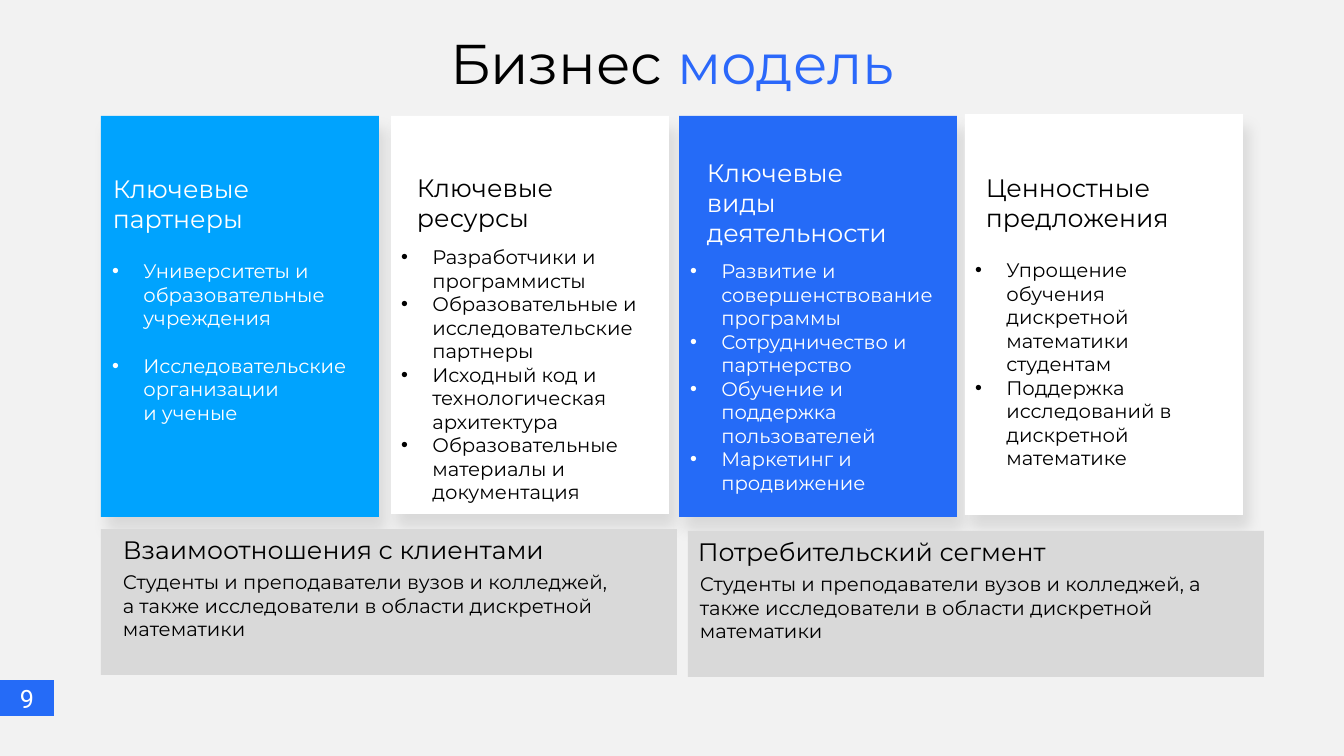
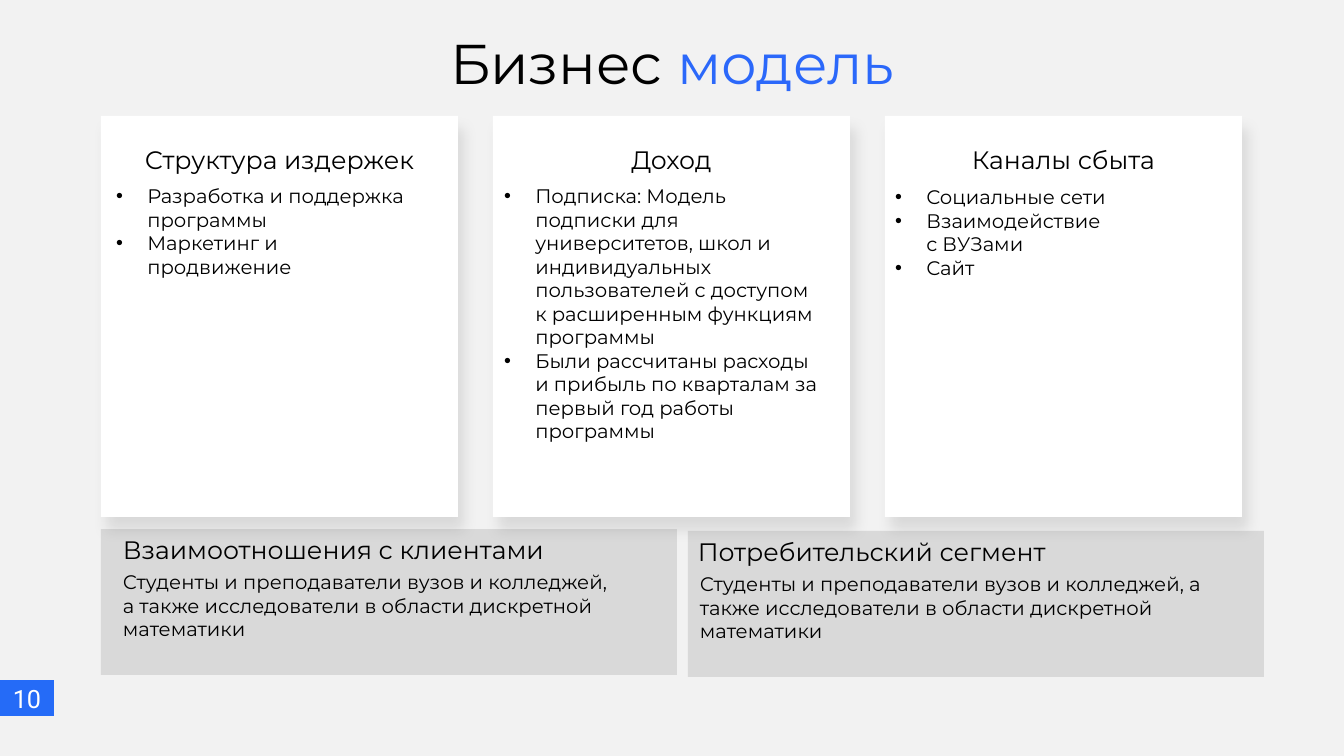
from dataclasses import dataclass

from lxml import etree
from pptx import Presentation
from pptx import util as u
from pptx.dml.color import RGBColor
from pptx.enum import shapes, text
from pptx.oxml.ns import qn

PX = 12192000 / 1344
BLACK = RGBColor(0x00, 0x00, 0x00)
WHITE = RGBColor(0xFF, 0xFF, 0xFF)
BACKGROUND = RGBColor(0xF2, 0xF2, 0xF2)
PANEL = RGBColor(0xD9, 0xD9, 0xD9)
SKY = RGBColor(0x00, 0xA3, 0xFE)
BLUE = RGBColor(0x25, 0x6B, 0xF7)
ACCENT = RGBColor(0x2B, 0x68, 0xFA)
COMPARISON = 4  # layout with a title and four body placeholders
HEADING, BODY = 18, 14
LEFT, CENTER = text.PP_ALIGN.LEFT, text.PP_ALIGN.CENTER


@dataclass
class Card:
    """A column of the model; boxes are in px, a list box reaches the card's foot."""
    heading: str
    items: list
    box: tuple
    heading_box: tuple
    list_box: tuple
    fill: RGBColor = WHITE
    color: RGBColor = BLACK
    align: int = LEFT
    gap: int = 0


def px(*lengths):
    return [u.Emu(round(length * PX)) for length in lengths]


class Deck:
    font = "Montserrat"

    def __init__(self):
        self.prs = Presentation()
        self.prs.slide_width, self.prs.slide_height = px(1344, 756)
        fill = self.prs.slide_master.background.fill
        fill.solid()
        fill.fore_color.rgb = BACKGROUND

    def start(self, number):
        layout = self.prs.slide_layouts[COMPARISON]
        self.slide = self.prs.slides.add_slide(layout)
        self.free_bodies = list(self.slide.placeholders)[1:]
        self.title(("Бизнес ", BLACK), ("модель", ACCENT))
        self.page_number(number)

    def finish(self):
        for body in self.free_bodies:
            body.element.getparent().remove(body.element)

    def run(self, paragraph, words, size, color, font=None):
        run = paragraph.add_run()
        run.text = words
        run.font.name = font or self.font
        run.font.size = u.Pt(size)
        run.font.bold = False
        run.font.color.rgb = color

    def place(self, placeholder, box):
        """Moves a placeholder to the front of the slide and prepares its frame."""
        self.slide.shapes._spTree.append(placeholder.element)
        (placeholder.left, placeholder.top,
         placeholder.width, placeholder.height) = px(*box)
        frame = placeholder.text_frame
        frame.word_wrap = True
        frame.auto_size = text.MSO_AUTO_SIZE.NONE
        frame.vertical_anchor = text.MSO_ANCHOR.TOP
        return frame

    def title(self, *parts):
        paragraph = self.place(self.slide.shapes.title, (423, 23, 498, 78)).paragraphs[0]
        paragraph.alignment = CENTER
        for words, color in parts:
            self.run(paragraph, words, 40, color)

    def rectangle(self, box, fill, shadow=False):
        shape = self.slide.shapes.add_shape(shapes.MSO_SHAPE.RECTANGLE, *px(*box))
        shape.fill.solid()
        shape.fill.fore_color.rgb = fill
        shape.line.fill.background()
        shape.shadow.inherit = False
        if shadow:
            effects = shape.element.spPr.find(qn("a:effectLst"))
            outer = etree.SubElement(
                effects, qn("a:outerShdw"), blurRad=str(u.Pt(10)),
                dist=str(u.Pt(10)), dir=str(67 * 60000), algn="tl", rotWithShape="0")
            tint = etree.SubElement(outer, qn("a:srgbClr"), val=str(BLACK))
            etree.SubElement(tint, qn("a:alpha"), val="10000")
        return shape

    def page_number(self, number):
        frame = self.rectangle((0, 680, 54, 36), BLUE).text_frame
        frame.vertical_anchor = text.MSO_ANCHOR.MIDDLE
        frame.margin_left = frame.margin_right = 0
        paragraph = frame.paragraphs[0]
        paragraph.alignment = CENTER
        self.run(paragraph, str(number), HEADING, WHITE, "Roboto")

    def label(self, words, box, size, color=BLACK, align=LEFT):
        frame = self.slide.shapes.add_textbox(*px(*box)).text_frame
        frame.word_wrap = True
        paragraph = frame.paragraphs[0]
        paragraph.alignment = align
        self.run(paragraph, words, size, color)

    def bullets(self, items, box, color, gap):
        """Fills the next body placeholder; a newline in an item is a line break."""
        frame = self.place(self.free_bodies.pop(0), box)
        for index, item in enumerate(items):
            paragraph = frame.add_paragraph() if index else frame.paragraphs[0]
            paragraph.alignment = LEFT
            paragraph.line_spacing = 1.0
            paragraph.space_before = u.Pt(gap if index else 0)
            props = paragraph._p.get_or_add_pPr()
            indent = u.Inches(0.31)
            props.set("marL", str(indent))
            props.set("indent", str(-indent))
            etree.SubElement(props, qn("a:buFont"), typeface="Arial")
            etree.SubElement(props, qn("a:buChar"), char="•")
            for line_index, line in enumerate(item.split("\n")):
                if line_index:
                    paragraph.add_line_break()
                self.run(paragraph, line, BODY, color)

    def cards(self, cards):
        for card in cards:
            self.rectangle(card.box, card.fill, shadow=True)
        for card in cards:
            self.label(card.heading, card.heading_box, HEADING, card.color, card.align)
            left, top, width = card.list_box
            foot = card.box[1] + card.box[3]
            self.bullets(card.items, (left, top, width, foot - top), card.color, card.gap)

    def customer_panels(self):
        audience = ("Студенты и преподаватели вузов и колледжей, а также "
                    "исследователи в области дискретной математики")
        for heading, left, top, heading_left, body_left, width in (
                ("Потребительский сегмент", 688, 531, 688, 690, 554),
                ("Взаимоотношения с клиентами", 101, 529, 113, 113, 507)):
            self.rectangle((left, top, 576, 146), PANEL)
            self.label(heading, (heading_left, top, width, 40), HEADING)
            self.label(audience, (body_left, top + 36, width, 82), BODY)


RESOURCES = [
    Card("Ключевые партнеры",
         ["Университеты и образовательные учреждения",
          "Исследовательские организации\nи ученые"],
         (101, 116, 278, 401), (103, 168, 171, 72), (102, 254, 256),
         SKY, WHITE, gap=17),
    Card("Ключевые ресурсы",
         ["Разработчики и программисты",
          "Образовательные и исследовательские партнеры",
          "Исходный код и технологическая архитектура",
          "Образовательные материалы и документация"],
         (391, 116, 278, 398), (407, 167, 171, 72), (391, 240, 266)),
    Card("Ключевые виды деятельности",
         ["Развитие и совершенствование программы",
          "Сотрудничество и партнерство",
          "Обучение и\nподдержка\nпользователей",
          "Маркетинг и\nпродвижение"],
         (679, 116, 278, 401), (697, 152, 213, 102), (680, 254, 268),
         BLUE, WHITE),
    Card("Ценностные предложения",
         ["Упрощение обучения дискретной математики студентам",
          "Поддержка исследований в дискретной математике"],
         (965, 114, 278, 401), (976, 167, 220, 72), (965, 253, 251)),
]

FINANCE_LISTS = [
    ("Структура издержек",
     ["Разработка и поддержка программы", "Маркетинг и продвижение"],
     (106, 179, 329)),
    ("Доход",
     ["Подписка: Модель подписки для университетов, школ и индивидуальных "
      "пользователей с доступом к расширенным функциям программы",
      "Были рассчитаны расходы и прибыль по кварталам за первый год работы программы"],
     (494, 179, 335)),
    ("Каналы сбыта",
     ["Социальные сети", "Взаимодействие\nс ВУЗами", "Сайт"],
     (885, 180, 247)),
]
FINANCE = [
    Card(heading, items, (101 + 392 * column, 116, 357, 401),
         (101 + 392 * column, 139, 357, 40), list_box, align=CENTER)
    for column, (heading, items, list_box) in enumerate(FINANCE_LISTS)
]


def main():
    deck = Deck()

    deck.start(9)
    deck.cards(RESOURCES)
    deck.customer_panels()
    deck.finish()

    deck.start(10)
    deck.customer_panels()
    deck.cards(FINANCE)
    deck.finish()

    deck.prs.save("out.pptx")


if __name__ == "__main__":
    main()
